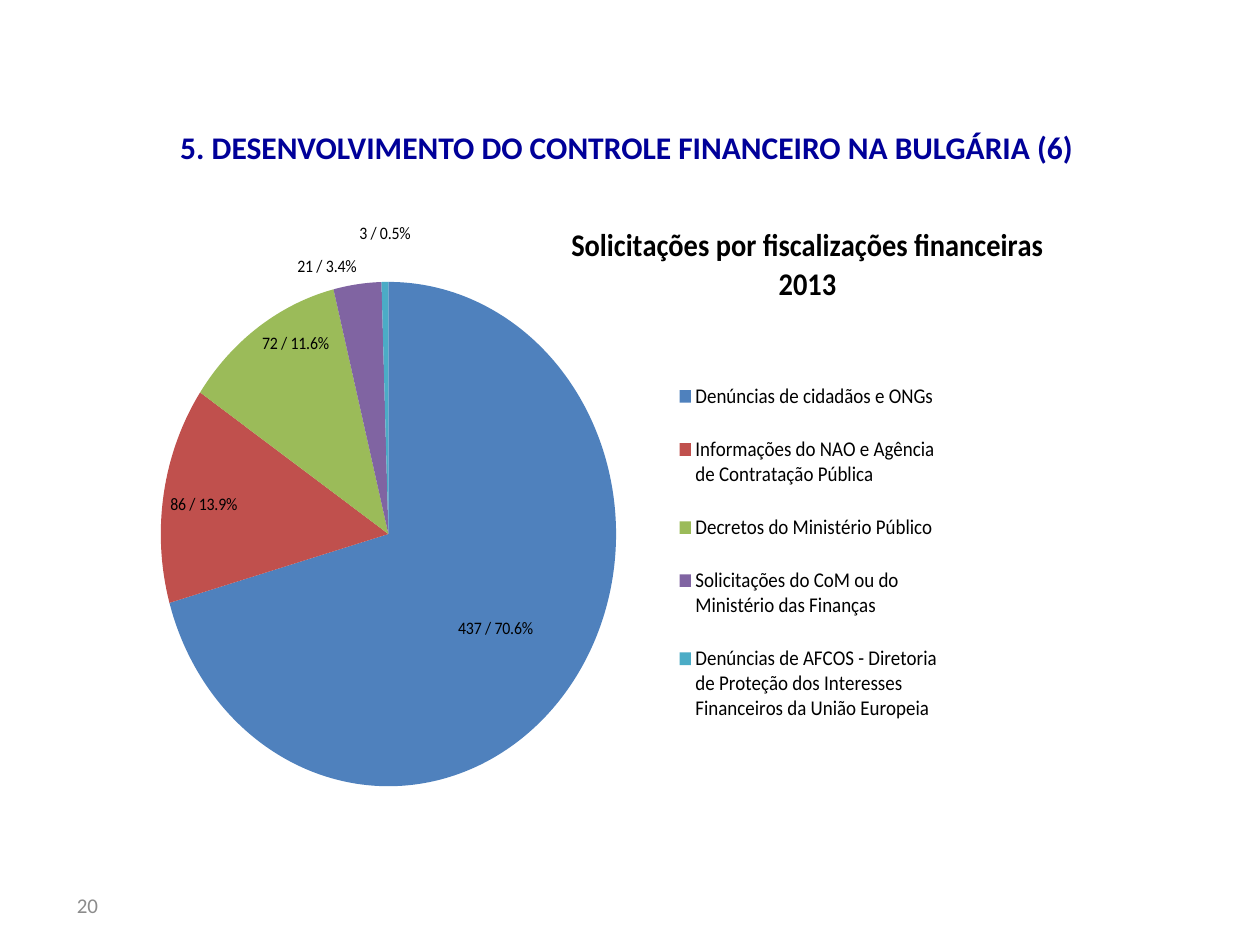
from dataclasses import dataclass
from typing import Any, Optional

from lxml.etree import SubElement, Element
from pptx import Presentation
from pptx.chart.data import CategoryChartData
from pptx.dml.color import RGBColor
from pptx.enum.chart import XL_CHART_TYPE, XL_LEGEND_POSITION as LegendSide
from pptx.enum.chart import XL_LABEL_POSITION as LabelSide
from pptx.enum.text import MSO_ANCHOR as Anchor, PP_ALIGN as Align
from pptx.oxml.ns import qn
from pptx.util import Cm, Pt


@dataclass
class Label:
    text: str
    left: float
    top: float
    width: float
    height: float
    color: str
    size: float
    bold: bool = False
    align: Align = Align.LEFT


@dataclass
class Slice:
    name: str
    count: int
    label: str
    color: str
    side: LabelSide
    offset: Optional[tuple[float, float]] = None


LABELS = [
    Label("20", 1.3, 17.73, 5.92, 1.02, "8C8C8C", 12),
    Label("5. DESENVOLVIMENTO DO CONTROLE FINANCEIRO NA BULGÁRIA (6)",
          2.54, 2.46, 20.19, 1.02, "000099", 18, True, Align.CENTER),
]
SLICES = [
    Slice("Denúncias de cidadãos e ONGs", 437, "437 / 70.6%", "4F81BD",
          LabelSide.CENTER, (0.02, 0.03)),
    Slice("Informações do NAO e Agência de Contratação Pública", 86,
          "86 / 13.9%", "C0504D", LabelSide.INSIDE_END),
    Slice("Decretos do Ministério Público", 72, "72 / 11.6%", "9BBB59",
          LabelSide.INSIDE_END),
    Slice("Solicitações do CoM ou do Ministério das Finanças", 21,
          "21 / 3.4%", "8064A2", LabelSide.OUTSIDE_END),
    Slice("Denúncias de AFCOS - Diretoria de Proteção dos Interesses "
          "Financeiros da União Europeia", 3, "3 / 0.5%", "4BACC6",
          LabelSide.OUTSIDE_END, (0, -0.05)),
]
CHART_TITLE = ["Solicitações por fiscalizações financeiras", "2013"]


def color_of(value: str) -> RGBColor:
    return RGBColor.from_string(value)


def format_font(font: Any, size: float, color: str = "000000", bold: bool = False) -> None:
    values = {"name": "Calibri", "size": Pt(size), "bold": bold}
    for name, value in values.items():
        setattr(font, name, value)
    font.color.rgb = color_of(color)


def set_layout(parent: Any, index: int, values: dict[str, Any]) -> None:
    for old in parent.findall(qn("c:layout")):
        parent.remove(old)
    layout = Element(qn("c:layout"))
    manual = SubElement(layout, qn("c:manualLayout"))
    for name, value in values.items():
        SubElement(manual, qn(f"c:{name}")).set("val", str(value))
    parent.insert(index, layout)


def add_label(page: Any, label: Label) -> None:
    sides = (label.left, label.top, label.width, label.height)
    box = page.shapes.add_textbox(*map(Cm, sides))
    frame = box.text_frame
    for name, value in {"word_wrap": True, "vertical_anchor": Anchor.MIDDLE}.items():
        setattr(frame, name, value)
    para = frame.paragraphs[0]
    para.alignment = label.align
    span = para.add_run()
    span.text = label.text
    format_font(span.font, label.size, label.color, label.bold)


def format_title(chart: Any) -> None:
    chart.has_title = True
    title = chart.chart_title
    frame = title.text_frame
    for index, line in enumerate(CHART_TITLE):
        para = frame.paragraphs[0] if index == 0 else frame.add_paragraph()
        span = para.add_run()
        span.text = line
        format_font(span.font, 18, bold=True)
    element = title._element
    set_layout(element, 1, {"xMode": "edge", "yMode": "edge", "x": 0.52, "y": 0.01})
    element.find(qn("c:overlay")).set("val", "1")


def format_legend(chart: Any) -> None:
    chart.has_legend = True
    legend = chart.legend
    values = {"position": LegendSide.RIGHT, "include_in_layout": False}
    for name, value in values.items():
        setattr(legend, name, value)
    format_font(legend.font, 12)
    set_layout(legend._element, 1, {"xMode": "edge", "yMode": "edge",
                                    "x": 0.65, "y": 0.23, "w": 0.33, "h": 0.64})


def format_slice(point: Any, part: Slice) -> None:
    point.format.fill.solid()
    point.format.fill.fore_color.rgb = color_of(part.color)
    data_label = point.data_label
    span = data_label.text_frame.paragraphs[0].add_run()
    span.text = part.label
    format_font(span.font, 10)
    data_label.position = part.side
    if part.offset:
        element = data_label._dLbl
        set_layout(element, 1, dict(zip("xy", part.offset)))


def add_pie(page: Any) -> None:
    data = CategoryChartData()
    data.categories = [part.name for part in SLICES]
    data.add_series("Series 1", [part.count for part in SLICES])
    sides = map(Cm, (2.9, 4.32, 18.21, 12.4))
    chart = page.shapes.add_chart(XL_CHART_TYPE.PIE, *sides, data).chart
    format_font(chart.font, 10)
    format_title(chart)
    format_legend(chart)
    plot = chart.plots[0]
    plot.vary_by_categories = True
    series = plot.series[0]
    series.data_labels.show_value = True
    for index, part in enumerate(SLICES):
        format_slice(series.points[index], part)
    leader = series.data_labels._element.find(qn("c:showLeaderLines"))
    if leader is not None:
        leader.set("val", "0")
    area = chart._chartSpace.chart.plotArea
    set_layout(area, 0, {"layoutTarget": "inner", "xMode": "edge", "yMode": "edge",
                         "x": 0.01, "y": 0.11, "w": 0.58, "h": 0.82})


def main() -> None:
    deck = Presentation()
    deck.slide_width, deck.slide_height = Cm(25.4), Cm(19.05)
    page = deck.slides.add_slide(deck.slide_layouts[6])
    for label in LABELS:
        add_label(page, label)
    add_pie(page)
    deck.save("out.pptx")


if __name__ == "__main__":
    main()
